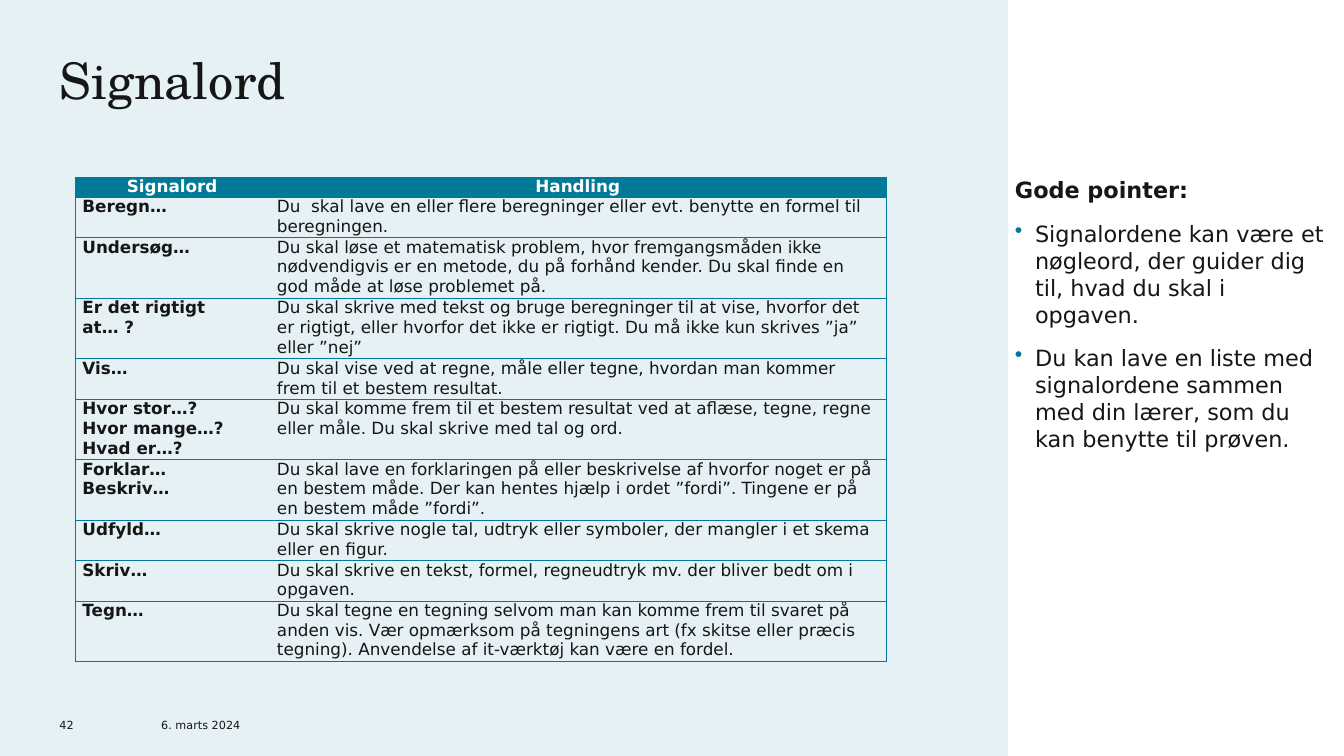
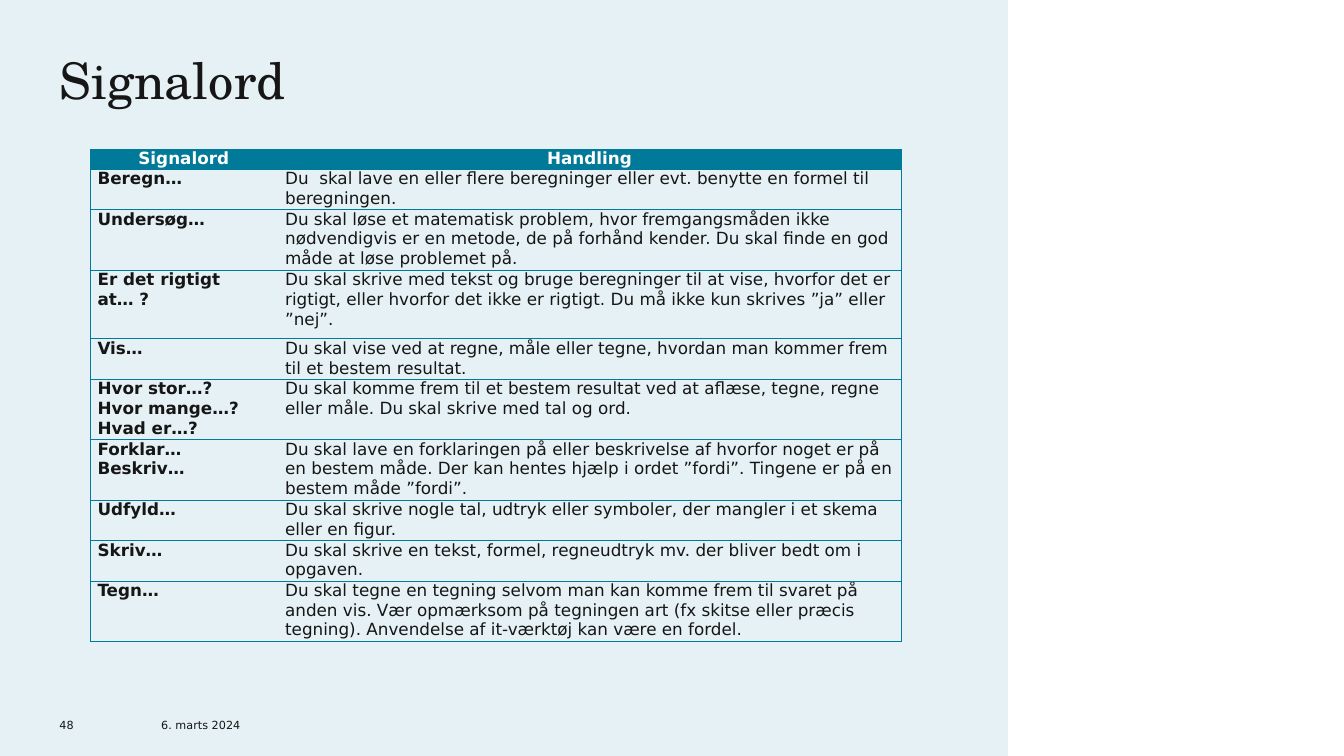
from lxml.etree import SubElement
from pptx import Presentation
from pptx.dml.color import RGBColor
from pptx.enum.shapes import MSO_SHAPE
from pptx.enum.text import MSO_ANCHOR, PP_ALIGN
from pptx.oxml.ns import qn
from pptx.util import Pt

COLORS = {"background": "E5F1F4", "panel": "FFFFFF", "text": "161616", "accent": "007A98"}
BODY_FONT = "DejaVu Sans"
TITLE_FORMAT = {"name": "TeX Gyre Schola", "size": Pt(36), "bold": False}
FOOTER_FORMAT = {"name": BODY_FONT, "size": Pt(8), "bold": False}
TABLE_FORMAT = {"name": BODY_FONT, "size": Pt(12)}
POINTER_FORMAT = {"name": BODY_FONT, "size": Pt(16)}
LINE_HEIGHT = 14.1

# Each row: signal words, action, number of text lines
ROWS = [
    ("Signalord", "Handling", 1),
    ("Beregn…", "Du  skal lave en eller flere beregninger eller evt. benytte en formel til "
     "beregningen.", 2),
    ("Undersøg…", "Du skal løse et matematisk problem, hvor fremgangsmåden ikke nødvendigvis er "
     "en metode, {pronoun} på forhånd kender. Du skal finde en god måde at løse problemet på.", 3),
    ("Er det rigtigt at… ?", "Du skal skrive med tekst og bruge beregninger til at vise, hvorfor "
     "det er rigtigt, eller hvorfor det ikke er rigtigt. Du må ikke kun skrives ”ja” eller "
     "”nej”{stop}", 3),
    ("Vis…", "Du skal vise ved at regne, måle eller tegne, hvordan man kommer frem til et bestem "
     "resultat.", 2),
    ("Hvor stor…?\nHvor mange…?\nHvad er…?", "Du skal komme frem til et bestem resultat ved at "
     "aflæse, tegne, regne eller måle. Du skal skrive med tal og ord.", 3),
    ("Forklar…\nBeskriv…", "Du skal lave en forklaringen på eller beskrivelse af hvorfor noget "
     "er på en bestem måde. Der kan hentes hjælp i ordet ”fordi”. Tingene er på en bestem måde "
     "”fordi”.", 3),
    ("Udfyld…", "Du skal skrive nogle tal, udtryk eller symboler, der mangler i et skema eller "
     "en figur.", 2),
    ("Skriv…", "Du skal skrive en tekst, formel, regneudtryk mv. der bliver bedt om i opgaven.", 2),
    ("Tegn…", "Du skal tegne en tegning selvom man kan komme frem til svaret på anden vis. Vær "
     "opmærksom på {drawing} art (fx skitse eller præcis tegning). Anvendelse af it-værktøj kan "
     "være en fordel.", 3),
]
POINTERS = [
    "Gode pointer:",
    "Signalordene kan være et nøgleord, der guider dig til, hvad du skal i opgaven.",
    "Du kan lave en liste med signalordene sammen med din lærer, som du kan benytte til prøven.",
]
SLIDES = [
    {"number": "42", "left": 53.5, "top": 126.5, "columns": (139, 440.6), "heights": {},
     "words": {"pronoun": "du", "stop": "", "drawing": "tegningens"}, "pointers": POINTERS},
    {"number": "48", "left": 64.3, "top": 106.5, "columns": (134, 445.6), "heights": {3: 49},
     "words": {"pronoun": "de", "stop": ".", "drawing": "tegningen"}, "pointers": []},
]


def format_text(text_frame, values, color="text"):
    for paragraph in text_frame.paragraphs:
        for name, value in values.items():
            setattr(paragraph.font, name, value)
        paragraph.font.color.rgb = RGBColor.from_string(COLORS[color])


def set_frame(text_frame, text, anchor):
    values = {"text": text, "word_wrap": True, "vertical_anchor": anchor, "margin_left": 0,
              "margin_right": 0, "margin_top": 0, "margin_bottom": 0}
    for name, value in values.items():
        setattr(text_frame, name, value)


presentation = Presentation()
presentation.slide_width, presentation.slide_height = Pt(960), Pt(540)
background = presentation.slide_master.background.fill
background.solid()
background.fore_color.rgb = RGBColor.from_string(COLORS["background"])

for content in SLIDES:
    slide = presentation.slides.add_slide(presentation.slide_layouts[5])

    # White side panel
    panel = slide.shapes.add_shape(MSO_SHAPE.RECTANGLE, Pt(720), 0, Pt(240), Pt(540))
    panel.shadow.inherit = False
    panel.fill.solid()
    panel.fill.fore_color.rgb = RGBColor.from_string(COLORS["panel"])
    panel.line.fill.background()

    # Title
    title = slide.shapes.title
    title.left, title.top, title.width, title.height = Pt(42.5), Pt(42.5), Pt(656), Pt(73.5)
    set_frame(title.text_frame, "Signalord", MSO_ANCHOR.TOP)
    format_text(title.text_frame, TITLE_FORMAT)
    title.text_frame.paragraphs[0].alignment = PP_ALIGN.LEFT
    title.text_frame.paragraphs[0].line_spacing = 0.83

    # Footer
    for text, left, width in ((content["number"], 42.5, 21.6), ("6. marts 2024", 115.2, 100)):
        footer = slide.shapes.add_textbox(Pt(left), Pt(508.3), Pt(width), Pt(14.4))
        set_frame(footer.text_frame, text, MSO_ANCHOR.BOTTOM)
        format_text(footer.text_frame, FOOTER_FORMAT)

    # Pointers
    if content["pointers"]:
        pointers = slide.shapes.add_textbox(Pt(725), Pt(126), Pt(227.5), Pt(198))
        set_frame(pointers.text_frame, "\n".join(content["pointers"]), MSO_ANCHOR.TOP)
        for paragraph in pointers.text_frame.paragraphs[1:]:
            paragraph.space_before = Pt(12)
            properties = paragraph._p.get_or_add_pPr()
            properties.set("marL", str(Pt(14.4)))
            properties.set("indent", str(-Pt(14.4)))
            bullet_color = SubElement(properties, qn("a:buClr"))
            SubElement(bullet_color, qn("a:srgbClr"), val=COLORS["accent"])
            SubElement(properties, qn("a:buChar"), char="•")
        format_text(pointers.text_frame, POINTER_FORMAT)
        pointers.text_frame.paragraphs[0].font.bold = True

    # Table of signal words
    heights = [content["heights"].get(index, lines * LINE_HEIGHT)
               for index, (_, _, lines) in enumerate(ROWS)]
    table = slide.shapes.add_table(len(ROWS), 2, Pt(content["left"]), Pt(content["top"]),
                                   Pt(sum(content["columns"])), Pt(sum(heights))).table
    table.horz_banding = False
    for column, width in zip(table.columns, content["columns"]):
        column.width = Pt(width)
    for row_index, (signal, action, _) in enumerate(ROWS):
        table.rows[row_index].height = Pt(heights[row_index])
        is_header = row_index == 0
        for column_index, text in enumerate((signal, action.format(**content["words"]))):
            cell = table.cell(row_index, column_index)
            cell.text = text
            cell.margin_left = cell.margin_right = Pt(5.4)
            cell.margin_top = cell.margin_bottom = 0
            bold = is_header or column_index == 0
            format_text(cell.text_frame, TABLE_FORMAT | {"bold": bold},
                        "panel" if is_header else "text")

            # Outer and horizontal borders; none between the columns
            inner_side = ("lnR", "lnL")[column_index]
            for side in ("lnL", "lnR", "lnT", "lnB"):
                border = SubElement(cell._tc.get_or_add_tcPr(), qn(f"a:{side}"), w=str(Pt(0.5)))
                if side == inner_side:
                    SubElement(border, qn("a:noFill"))
                else:
                    border_fill = SubElement(border, qn("a:solidFill"))
                    SubElement(border_fill, qn("a:srgbClr"), val=COLORS["accent"])
            if is_header:
                cell.text_frame.paragraphs[0].alignment = PP_ALIGN.CENTER
                cell.fill.solid()
                cell.fill.fore_color.rgb = RGBColor.from_string(COLORS["accent"])
            else:
                cell.fill.background()

presentation.save("out.pptx")
